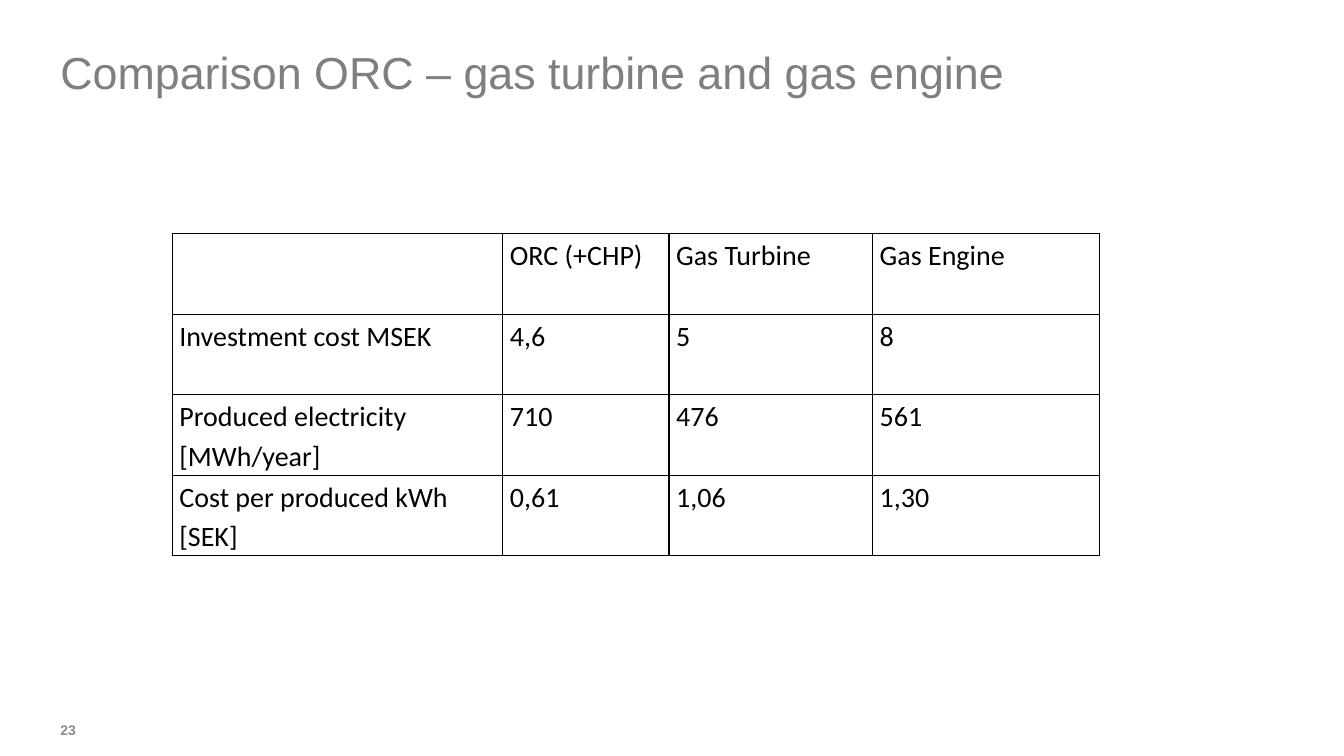
from dataclasses import dataclass

from lxml.etree import SubElement
from pptx import Presentation
from pptx.dml.color import RGBColor
from pptx.enum.text import MSO_ANCHOR
from pptx.oxml.ns import qn
from pptx.slide import Slide
from pptx.table import _Cell
from pptx.text.text import TextFrame
from pptx.util import Cm, Pt


@dataclass(frozen=True)
class TextStyle:
    font: str
    size: float
    color: str
    bold: bool = False


@dataclass(frozen=True)
class Theme:
    title: TextStyle = TextStyle("Arial", 32, "7F7F7F")
    number: TextStyle = TextStyle("Arial", 10, "8C8C8C", bold=True)
    cell: TextStyle = TextStyle("Calibri", 20, "000000")
    border_color: str = "000000"
    border_width: float = 1


@dataclass(frozen=True)
class Label:
    text: str
    left: float
    top: float
    width: float
    height: float
    style: TextStyle
    padding: float = 0
    anchor: MSO_ANCHOR = MSO_ANCHOR.TOP
    wrap: bool = True


THEME = Theme()

# Lengths in centimetres
LABELS = (
    Label("Comparison ORC – gas turbine and gas engine",
          1.52, 1.12, 30.81, 1.37, THEME.title),
    Label("23", 1.52, 18.06, 0.43, 0.69, THEME.number,
          padding=0.13, anchor=MSO_ANCHOR.MIDDLE, wrap=False),
)

TABLE_LEFT, TABLE_TOP = 4.34, 5.89
COLUMN_WIDTHS = (8.33, 4.19, 5.13, 5.72)
ROW_HEIGHT = 2.03
COMPARISON = (
    ("", "ORC (+CHP)", "Gas Turbine", "Gas Engine"),
    ("Investment cost MSEK", "4,6", "5", "8"),
    ("Produced electricity [MWh/year]", "710", "476", "561"),
    ("Cost per produced kWh [SEK]", "0,61", "1,06", "1,30"),
)


def write_text(frame: TextFrame, text: str, style: TextStyle) -> None:
    run = frame.paragraphs[0].add_run()
    run.text = text
    run.font.name = style.font
    run.font.size = Pt(style.size)
    run.font.bold = style.bold
    run.font.color.rgb = RGBColor.from_string(style.color)


def add_label(slide: Slide, label: Label) -> None:
    shape = slide.shapes.add_textbox(
        Cm(label.left), Cm(label.top), Cm(label.width), Cm(label.height))
    frame = shape.text_frame
    frame.word_wrap = label.wrap
    frame.vertical_anchor = label.anchor
    frame.margin_left = frame.margin_right = 0
    frame.margin_top = frame.margin_bottom = Cm(label.padding)
    write_text(frame, label.text, label.style)


def add_borders(cell: _Cell) -> None:
    properties = cell._tc.get_or_add_tcPr()
    for side in ("lnL", "lnR", "lnT", "lnB"):
        line = SubElement(properties, qn(f"a:{side}"), w=str(Pt(THEME.border_width)))
        fill = SubElement(line, qn("a:solidFill"))
        SubElement(fill, qn("a:srgbClr"), val=THEME.border_color)


def format_cell(cell: _Cell, text: str) -> None:
    add_borders(cell)
    cell.fill.background()
    cell.margin_left = cell.margin_right = Cm(0.18)
    cell.margin_top = cell.margin_bottom = 0
    cell.text_frame.paragraphs[0].line_spacing = 1.15
    if text:
        write_text(cell.text_frame, text, THEME.cell)


def add_comparison(slide: Slide) -> None:
    table = slide.shapes.add_table(
        len(COMPARISON), len(COLUMN_WIDTHS), Cm(TABLE_LEFT), Cm(TABLE_TOP),
        Cm(sum(COLUMN_WIDTHS)), Cm(ROW_HEIGHT * len(COMPARISON))).table
    table.first_row = table.horz_banding = False
    for column, width in zip(table.columns, COLUMN_WIDTHS):
        column.width = Cm(width)
    for row, texts in zip(table.rows, COMPARISON):
        row.height = Cm(ROW_HEIGHT)
        for cell, text in zip(row.cells, texts):
            format_cell(cell, text)


def main() -> None:
    presentation = Presentation()
    presentation.slide_width, presentation.slide_height = Cm(33.87), Cm(19.05)
    slide = presentation.slides.add_slide(presentation.slide_layouts[6])

    # Comparison table
    add_comparison(slide)

    # Title and slide number
    for label in LABELS:
        add_label(slide, label)

    presentation.save("out.pptx")


if __name__ == "__main__":
    main()
